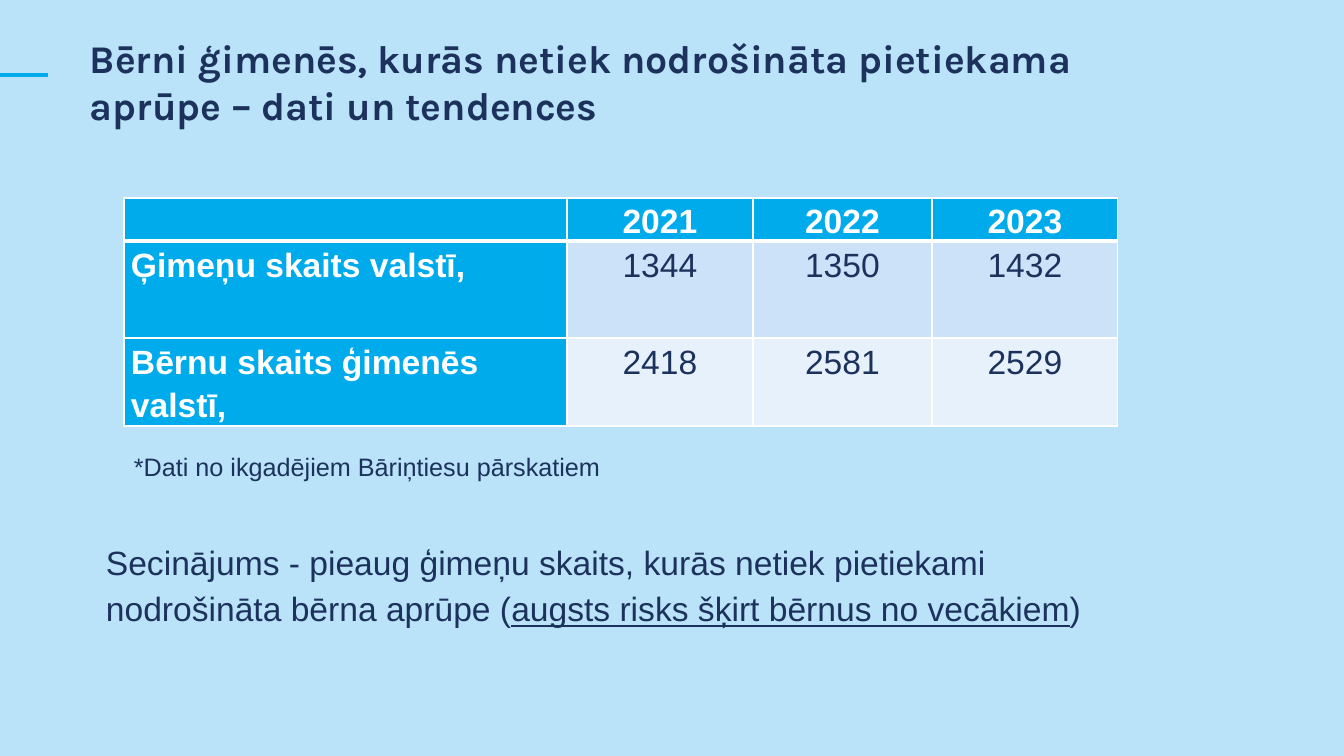
from lxml import etree
from pptx import Presentation
from pptx.dml.color import RGBColor
from pptx.enum.shapes import MSO_CONNECTOR
from pptx.enum.text import MSO_ANCHOR, PP_ALIGN
from pptx.oxml.ns import qn
from pptx.util import Emu, Pt

SKY = RGBColor(0xBA, 0xE3, 0xF9)
BLUE = RGBColor(0x00, 0xAB, 0xEC)
NAVY = RGBColor(0x1C, 0x32, 0x5D)
WHITE = RGBColor(0xFF, 0xFF, 0xFF)
BANDS = [RGBColor(0xCC, 0xE2, 0xF8), RGBColor(0xE7, 0xF1, 0xFB)]

TITLE = "Bērni ģimenēs, kurās netiek nodrošināta pietiekama aprūpe – dati un tendences"
TABLE = [
    ("", "2021", "2022", "2023"),
    ("Ģimeņu skaits valstī,", "1344", "1350", "1432"),
    ("Bērnu skaits ģimenēs valstī,", "2418", "2581", "2529"),
]
COL_WIDTHS = [443, 186, 179, 186]
ROW_HEIGHTS = [43, 97, 88]
FOOTNOTE = "*Dati no ikgadējiem Bāriņtiesu pārskatiem"
CONCLUSION = [  # text, underlined
    ("Secinājums - pieaug ģimeņu skaits, kurās netiek pietiekami "
     "nodrošināta bērna aprūpe (", False),
    ("augsts risks šķirt bērnus no vecākiem", True),
    (")", False),
]


def px(n):
    return Emu(round(n * 914400 / 100.8))


def add_run(p, text, size, color=NAVY, bold=False, underline=False, font="Arial"):
    r = p.add_run()
    r.text = text
    f = r.font
    f.name, f.size, f.bold, f.underline = font, Pt(size), bold, underline
    f.color.rgb = color


def loosen(p):
    p.line_spacing = 1.15
    p.space_after = Pt(8)


def add_box(s, x, y, w, h):
    tf = s.shapes.add_textbox(px(x), px(y), px(w), px(h)).text_frame
    tf.word_wrap = True
    return tf.paragraphs[0]


def set_borders(cell, bottom):
    """White cell borders; they must stand before the fill in tcPr."""
    tcPr = cell._tc.get_or_add_tcPr()
    for i, (side, width) in enumerate(
            [("lnL", 1), ("lnR", 1), ("lnT", 1), ("lnB", bottom)]):
        ln = etree.Element(qn(f"a:{side}"), w=str(Pt(width)))
        fill = etree.SubElement(ln, qn("a:solidFill"))
        etree.SubElement(fill, qn("a:srgbClr"), val=str(WHITE))
        tcPr.insert(i, ln)


def fill_cell(cell, text, row, col):
    heading = row == 0 or col == 0
    cell.fill.solid()
    cell.fill.fore_color.rgb = BLUE if heading else BANDS[row - 1]
    set_borders(cell, 3 if row == 0 else 1)
    cell.margin_left = cell.margin_right = px(7)
    cell.margin_top = cell.margin_bottom = 0
    cell.vertical_anchor = MSO_ANCHOR.TOP
    p = cell.text_frame.paragraphs[0]
    loosen(p)
    if col:
        p.alignment = PP_ALIGN.CENTER
    if text:
        add_run(p, text, 24, WHITE if heading else NAVY, heading)


def add_data_table(s, x, y):
    table = s.shapes.add_table(len(TABLE), len(COL_WIDTHS), px(x), px(y),
                               px(sum(COL_WIDTHS)), px(sum(ROW_HEIGHTS))).table
    for column, w in zip(table.columns, COL_WIDTHS):
        column.width = px(w)
    for row, h in zip(table.rows, ROW_HEIGHTS):
        row.height = px(h)
    for i, values in enumerate(TABLE):
        for j, text in enumerate(values):
            fill_cell(table.cell(i, j), text, i, j)


def main():
    prs = Presentation()
    prs.slide_width, prs.slide_height = px(1344), px(756)
    s = prs.slides.add_slide(prs.slide_layouts[6])
    s.background.fill.solid()
    s.background.fill.fore_color.rgb = SKY

    accent = s.shapes.add_connector(MSO_CONNECTOR.STRAIGHT, 0, px(75), px(48), px(75))
    accent.line.color.rgb = BLUE
    accent.line.width = Pt(3.2)
    etree.SubElement(accent._element.spPr, qn("a:effectLst"))

    add_data_table(s, 124, 198)

    p = add_box(s, 96, 531, 1077, 101)
    loosen(p)
    for text, underline in CONCLUSION:
        add_run(p, text, 24, underline=underline)

    add_run(add_box(s, 80, 29, 1109, 105), TITLE, 28, bold=True, font="Karla")

    p = add_box(s, 124, 442, 671, 43)
    loosen(p)
    add_run(p, FOOTNOTE, 18)

    prs.save("out.pptx")


if __name__ == "__main__":
    main()
